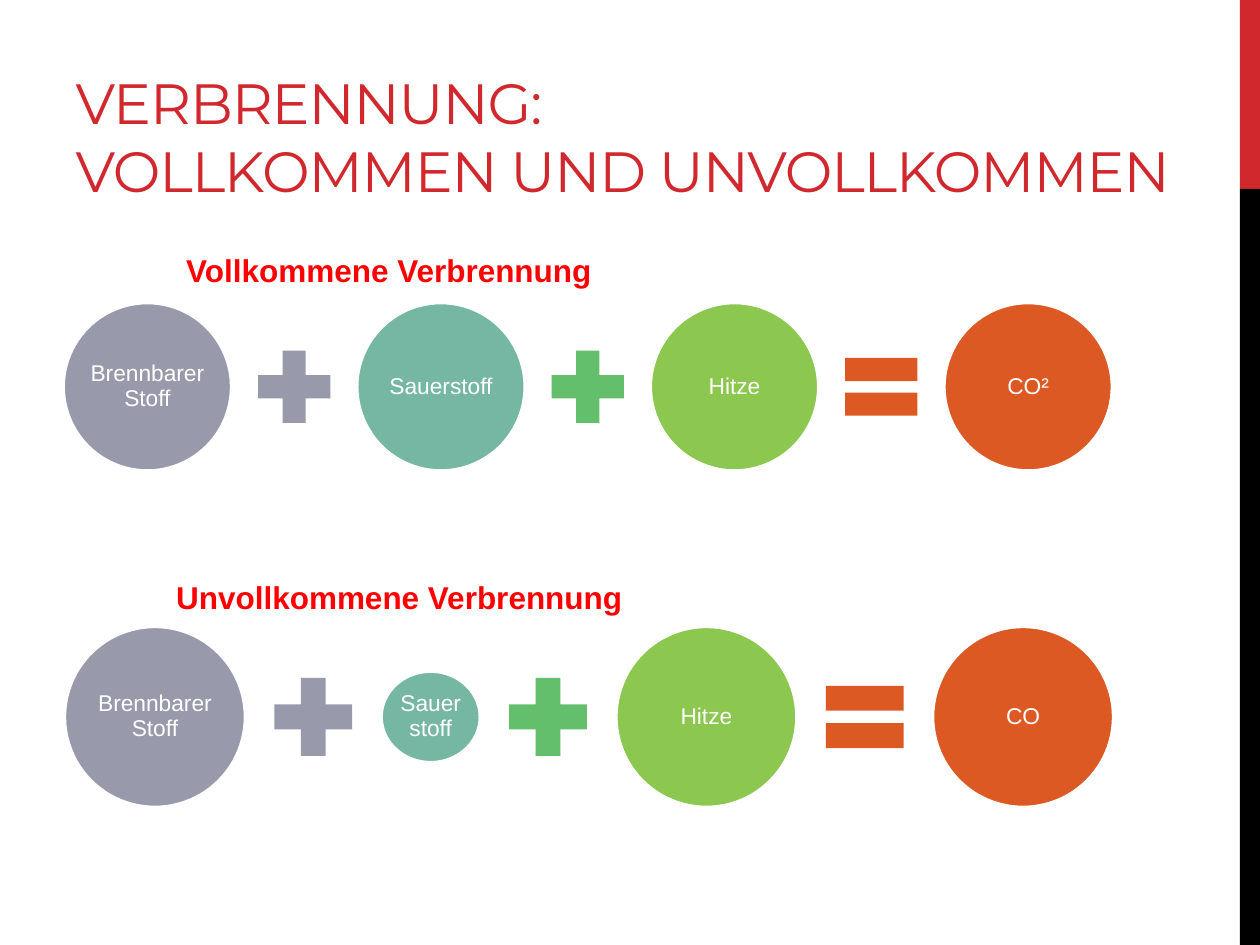
"""Build the slide on complete and incomplete combustion."""
from pptx import Presentation
from pptx.dml.color import RGBColor
from pptx.enum.shapes import MSO_SHAPE
from pptx.enum.text import MSO_ANCHOR, MSO_AUTO_SIZE, PP_ALIGN
from pptx.util import Inches, Pt

RECT, OVAL = MSO_SHAPE.RECTANGLE, MSO_SHAPE.OVAL
PLUS, EQUAL = MSO_SHAPE.MATH_PLUS, MSO_SHAPE.MATH_EQUAL
MIDDLE, BOTTOM = MSO_ANCHOR.MIDDLE, MSO_ANCHOR.BOTTOM
LEFT, CENTER = PP_ALIGN.LEFT, PP_ALIGN.CENTER
NO_FIT = MSO_AUTO_SIZE.NONE

COLORS = {
    "accent": "D1282E", "black": "000000", "white": "FFFFFF", "heading": "FF0000",
    "gray": "989AAC", "teal": "76B7A3", "green": "63BF6C", "lime": "8CC74F",
    "orange": "DC5924",
}
TITLE = "VERBRENNUNG:\vVOLLKOMMEN UND UNVOLLKOMMEN"
SIDEBAR = [(0, 1.5, "accent"), (1.5, 6, "black")]
OPERATORS = [(PLUS, "gray"), (PLUS, "green"), (EQUAL, "orange")]
TERM_COLORS = ["gray", "teal", "lime", "orange"]
EQUATIONS = [
    {"heading": "Vollkommene Verbrennung", "heading_at": (1.38, 1.94),
     "left": 0.5, "right": 8.83, "middle": 3.07, "operator": 0.78,
     "terms": [("Brennbarer Stoff", 1.34, 1.34), ("Sauerstoff", 1.34, 1.34),
               ("Hitze", 1.34, 1.34), ("CO²", 1.34, 1.34)]},
    {"heading": "Unvollkommene Verbrennung", "heading_at": (1.3, 4.54),
     "left": 0.51, "right": 8.84, "middle": 5.69, "operator": 0.84,
     "terms": [("Brennbarer Stoff", 1.44, 1.44), ("Sauerstoff", 0.79, 0.73),
               ("Hitze", 1.44, 1.44), ("CO", 1.44, 1.44)]},
]


def rgb(name):
    return RGBColor.from_string(COLORS[name])


def style_text(p, font, size, color, align, bold=False):
    p.alignment = align
    for r in p.runs:
        r.font.name, r.font.size, r.font.bold = font, Pt(size), bold
        r.font.color.rgb = rgb(color)


def add_filled(shapes, kind, x, y, w, h, color):
    sp = shapes.add_shape(kind, Inches(x), Inches(y), Inches(w), Inches(h))
    sp.shadow.inherit = False
    sp.fill.solid()
    sp.fill.fore_color.rgb = rgb(color)
    sp.line.fill.background()
    return sp


def add_term(shapes, text, x, y, w, h, color):
    sp = add_filled(shapes, OVAL, x, y, w, h, color)
    sp.line.color.rgb = rgb("white")
    sp.line.width = Pt(2.25)
    tf = sp.text_frame
    tf.margin_left = tf.margin_right = tf.margin_top = tf.margin_bottom = Inches(0.02)
    tf.vertical_anchor, tf.word_wrap = MIDDLE, True
    tf.text = text
    p = tf.paragraphs[0]
    p.line_spacing = 0.9
    style_text(p, "Arial", 13, "white", CENTER)


def add_equation(s, eq):
    shapes = s.shapes.add_group_shape().shapes
    size, terms = eq["operator"], eq["terms"]
    used = sum(w for _, w, _ in terms) + size * len(OPERATORS)
    gap = (eq["right"] - eq["left"] - used) / (2 * len(OPERATORS))
    x = eq["left"]
    for i, (text, w, h) in enumerate(terms):
        add_term(shapes, text, x, eq["middle"] - h / 2, w, h, TERM_COLORS[i])
        x += w + gap
        if i < len(OPERATORS):
            kind, color = OPERATORS[i]
            add_filled(shapes, kind, x, eq["middle"] - size / 2, size, size, color)
            x += size + gap


def add_heading(s, text, x, y):
    sp = s.shapes.add_textbox(Inches(x), Inches(y), Inches(4.17), Inches(0.4))
    tf = sp.text_frame
    tf.word_wrap = True
    tf.text = text
    style_text(tf.paragraphs[0], "Arial", 18, "heading", LEFT, bold=True)


def set_title(s):
    sp = s.shapes.title
    sp.left, sp.top = Inches(0.5), Inches(0.17)
    sp.width, sp.height = Inches(9.3), Inches(1.5)
    tf = sp.text_frame
    tf.text = TITLE
    tf.auto_size, tf.vertical_anchor, tf.word_wrap = NO_FIT, BOTTOM, True
    p = tf.paragraphs[0]
    style_text(p, "Montserrat", 32.4, "accent", LEFT)
    for r in p.runs:
        r.font._element.set("spc", "-60")


def main():
    prs = Presentation()
    prs.slide_width, prs.slide_height = Inches(10), Inches(7.5)
    s = prs.slides.add_slide(prs.slide_layouts[5])
    for y, h, color in SIDEBAR:
        add_filled(s.shapes, RECT, 9.84, y, 0.16, h, color)
    set_title(s)
    for eq in EQUATIONS:
        add_equation(s, eq)
    for eq in EQUATIONS:
        add_heading(s, eq["heading"], *eq["heading_at"])
    prs.save("out.pptx")


if __name__ == "__main__":
    main()
